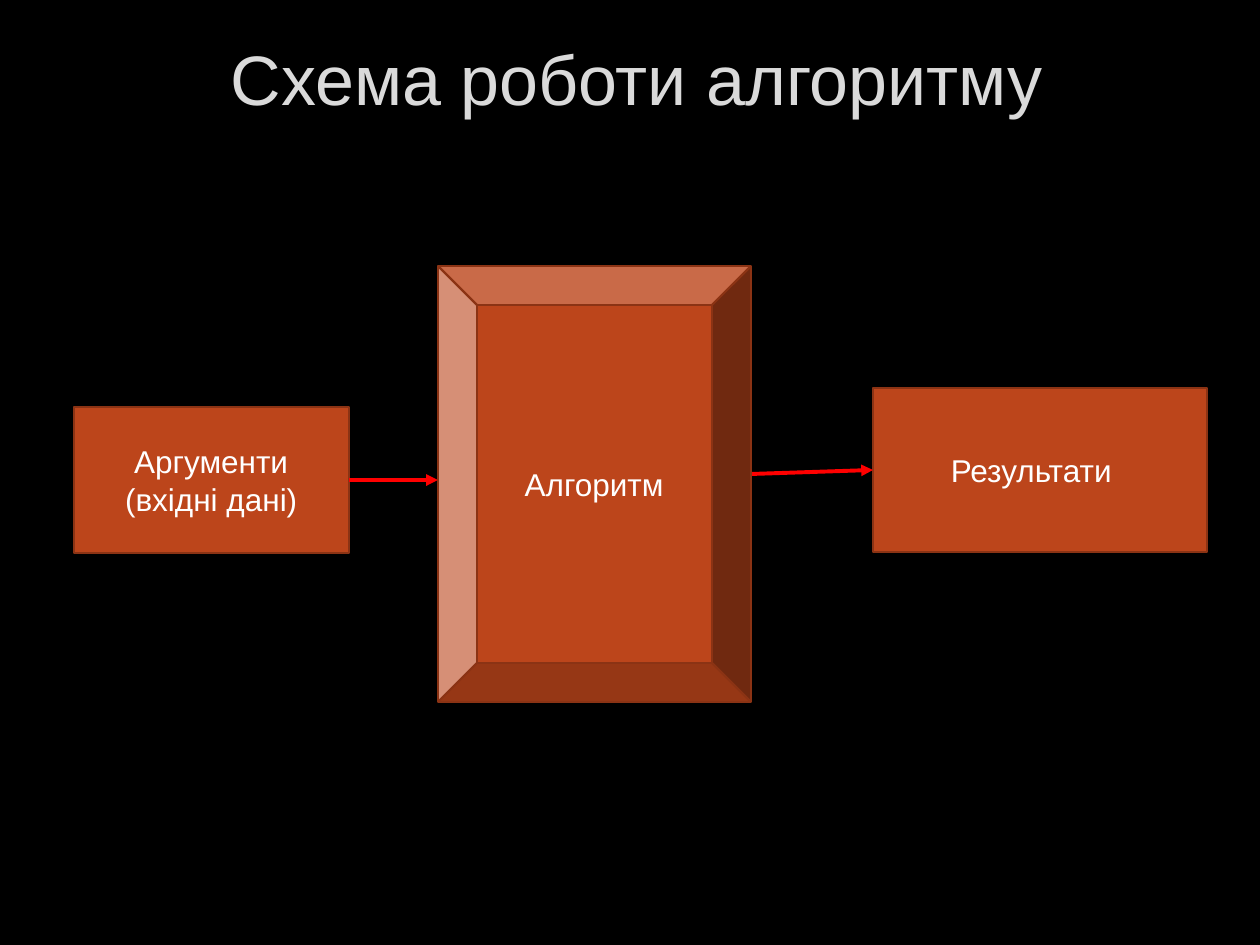
import pptx
import pptx.dml.color
import pptx.enum.shapes
import pptx.enum.text
import pptx.oxml
import pptx.oxml.ns
import pptx.util

RGB = pptx.dml.color.RGBColor
KIND = pptx.enum.shapes.MSO_SHAPE
BLACK = RGB(0x00, 0x00, 0x00)
WHITE = RGB(0xFF, 0xFF, 0xFF)
GREY = RGB(0xDA, 0xDA, 0xDA)
RUST = RGB(0xBC, 0x45, 0x1B)
BROWN = RGB(0x8B, 0x33, 0x14)
RED = RGB(0xFF, 0x00, 0x00)

FONT = "Arial"
INSET = 13
TITLE = ("Схема роботи алгоритму", (102, 10, 1070, 134))
# kind, lines, (left, top, width, height), right inset
INPUT = (KIND.RECTANGLE, ["Аргументи", "(вхідні дані)"], (74, 407, 275, 146), INSET)
RESULT = (KIND.RECTANGLE, ["Результати"], (873, 388, 334, 164), INSET + 17)
STEP = (KIND.BEVEL, ["Алгоритм"], (438, 266, 313, 436), INSET)
# ends of the arrows on the bevel
ENTRY = (438, 480)
EXIT = (751, 474)


def emu(px):
    return round(px * 914400 / 126)


def write(shape, lines, size, color, right=INSET):
    frame = shape.text_frame
    frame.word_wrap = True
    frame.margin_right = emu(right)
    frame.vertical_anchor = pptx.enum.text.MSO_ANCHOR.MIDDLE
    for i, line in enumerate(lines):
        para = frame.paragraphs[0] if i == 0 else frame.add_paragraph()
        para.alignment = pptx.enum.text.PP_ALIGN.CENTER
        run = para.add_run()
        run.text = line
        run.font.name = FONT
        run.font.size = pptx.util.Pt(size)
        run.font.color.rgb = color


def add_box(slide, kind, lines, place, right):
    box = slide.shapes.add_shape(kind, *map(emu, place))
    box.shadow.inherit = False
    box.fill.solid()
    box.fill.fore_color.rgb = RUST
    box.line.color.rgb = BROWN
    box.line.width = pptx.util.Pt(1.25)
    write(box, lines, 18, WHITE, right)
    return box


def add_arrow(slide, start, end):
    kind = pptx.enum.shapes.MSO_CONNECTOR.STRAIGHT
    arrow = slide.shapes.add_connector(kind, *map(emu, start + end))
    arrow.line.color.rgb = RED
    arrow.line.width = pptx.util.Pt(2.25)
    props = arrow._element.spPr
    head = pptx.oxml.parse_xml(
        f'<a:tailEnd {pptx.oxml.ns.nsdecls("a")} type="triangle"/>')
    props.find(pptx.oxml.ns.qn("a:ln")).append(head)
    props.append(pptx.oxml.parse_xml(
        f'<a:effectLst {pptx.oxml.ns.nsdecls("a")}/>'))
    return arrow


def main():
    deck = pptx.Presentation()
    deck.slide_width, deck.slide_height = emu(1260), emu(945)
    slide = deck.slides.add_slide(deck.slide_layouts[6])
    slide.background.fill.solid()
    slide.background.fill.fore_color.rgb = BLACK

    source = add_box(slide, *INPUT)
    result = add_box(slide, *RESULT)
    # the joined ends move to the middle of the rectangle's side
    add_arrow(slide, ENTRY, ENTRY).begin_connect(source, 3)
    add_arrow(slide, EXIT, EXIT).end_connect(result, 1)
    add_box(slide, *STEP)

    text, place = TITLE
    title = slide.shapes.add_textbox(*map(emu, place))
    write(title, [text], 40, GREY)

    deck.save("out.pptx")


if __name__ == "__main__":
    main()
